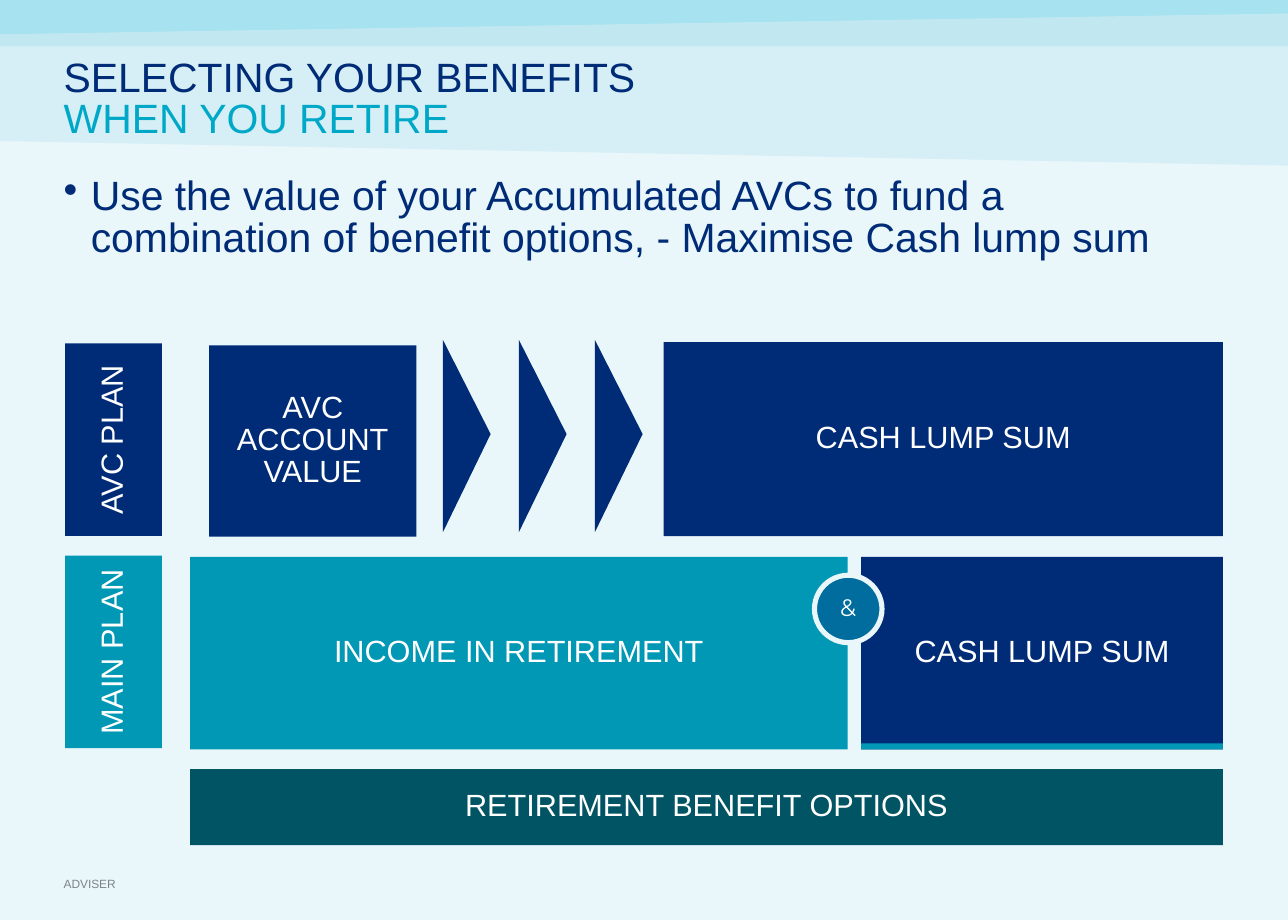
"""Build the slide on selecting benefits at retirement."""
from dataclasses import dataclass

from pptx import Presentation
from pptx.dml.color import RGBColor
from pptx.enum import shapes as kinds, text as txt
from pptx.oxml.ns import qn
from pptx import util as u

WIDE, HIGH = u.Inches(10.5), u.Inches(7.5)


@dataclass(frozen=True)
class Theme:
    """Hold the colours, fonts and type sizes."""
    ground: str = "EAF7FA"
    bands: tuple = ("A6E2EF", "C1E8F1", "D6EFF6")
    navy: str = "002C77"
    teal: str = "0098B5"
    sky: str = "00A8C8"
    deep: str = "005464"
    blue: str = "006D9E"
    white: str = "FFFFFF"
    grey: str = "7C848A"
    font: str = "Arial"
    badge: str = "Montserrat"
    head: int = 24
    label: int = 18
    sign: int = 14
    foot: int = 7


T = Theme()


def across(share):
    """Turn a percentage of the slide width into a length."""
    return round(WIDE * share / 100)


def down(share):
    """Turn a percentage of the slide height into a length."""
    return round(HIGH * share / 100)


def area(x, y, w, h):
    """Turn four percentages into left, top, width and height."""
    return across(x), down(y), across(w), down(h)


def paint(fill, color):
    """Fill with one solid colour."""
    fill.solid()
    fill.fore_color.rgb = RGBColor.from_string(color)


def write(shape, *lines, size=T.label, colors=(T.white,), font=T.font,
          align=txt.PP_ALIGN.CENTER, anchor=txt.MSO_ANCHOR.MIDDLE,
          lead=0.86, pad=(0, 0), wrap=True, turn=None, bullet=None):
    """Write one paragraph per line in the given format."""
    frame = shape.text_frame
    frame.word_wrap, frame.vertical_anchor = wrap, anchor
    frame.margin_left = frame.margin_right = across(pad[0])
    frame.margin_top = frame.margin_bottom = down(pad[1])
    if turn:
        frame._txBody.bodyPr.set("vert", turn)
    for i, line in enumerate(lines):
        para = frame.add_paragraph() if i else frame.paragraphs[0]
        para.alignment, para.line_spacing = align, lead
        run = para.add_run()
        run.text = line
        run.font.size, run.font.name = u.Pt(size), font
        run.font.color.rgb = RGBColor.from_string(colors[i % len(colors)])
        if bullet:
            props = para._p.get_or_add_pPr()
            dent = across(2.1)
            props.set("marL", str(dent))
            props.set("indent", str(-dent))
            mark = props.makeelement(qn("a:buChar"), {"char": bullet})
            props.append(mark)


def block(slide, box, color, *lines, kind="RECTANGLE", **style):
    """Add a plain filled shape, with a label if lines are given."""
    form = getattr(kinds.MSO_SHAPE, kind)
    shape = slide.shapes.add_shape(form, *area(*box))
    shape.shadow.inherit = False
    paint(shape.fill, color)
    shape.line.fill.background()
    if lines:
        write(shape, *lines, **style)
    return shape


def note(slide, box, *lines, **style):
    """Add a text box aligned to the left."""
    shape = slide.shapes.add_textbox(*area(*box))
    write(shape, *lines, align=txt.PP_ALIGN.LEFT, **style)


def band(slide, color, *points):
    """Add a slanted band through points given as shares."""
    spots = [(across(x), down(y)) for x, y in points]
    pen = slide.shapes.build_freeform(*spots[0])
    pen.add_line_segments(spots[1:], close=True)
    shape = pen.convert_to_shape()
    shape.shadow.inherit = False
    paint(shape.fill, color)
    shape.line.fill.background()


def arrow(slide, x, y, w, h):
    """Add a triangle that points right and fills the given area."""
    shape = block(slide, (x, y, w, h), T.navy, kind="ISOSCELES_TRIANGLE")
    left, top, wide, high = area(x, y, w, h)
    shape.left, shape.top = left + (wide - high) // 2, top + (high - wide) // 2
    shape.width, shape.height = high, wide
    shape.rotation = 90
    shape.adjustments[0] = 0.49


def header(slide):
    """Draw the bands, the title, the bullet and the footer."""
    edges = ((0, 0, 1.87, 4.13), (3.73, 1.47, 5.07, 5.07),
             (5.07, 5.07, 18, 15.33))
    for color, ys in zip(T.bands, edges):
        band(slide, color, *zip((0, 100, 100, 0), ys))
    top = txt.MSO_ANCHOR.TOP
    note(slide, (4.95, 5.87, 90, 12.53), "SELECTING YOUR BENEFITS",
         "WHEN YOU RETIRE", size=T.head, colors=(T.navy, T.sky),
         anchor=top, lead=0.83, pad=(0, 0.67))
    note(slide, (4.95, 18.53, 90, 11.47),
         "Use the value of your Accumulated AVCs to fund a combination of "
         "benefit options, - Maximise Cash lump sum", size=T.head,
         colors=(T.navy,), anchor=top, pad=(0, 0.67), bullet="•")
    note(slide, (4.95, 95.33, 30.1, 1.47), "ADVISER", size=T.foot,
         colors=(T.grey,), anchor=txt.MSO_ANCHOR.BOTTOM, lead=1, wrap=False)


def plans(slide):
    """Draw the two plan rows and the bar of options below them."""
    side, start, end, tall = 5.05, 14.76, 94.95, 20.93
    rows = 37.33, 60.4
    for y, color, name in zip(rows, (T.navy, T.teal),
                              ("AVC PLAN", "MAIN PLAN")):
        block(slide, (side, y, 7.52, tall), color, name, turn="vert270")
    block(slide, (16.24, 37.55, 16.1, 20.8), T.navy,
          "AVC", "ACCOUNT", "VALUE")
    for i in range(3):
        arrow(slide, 34.38 + 5.9 * i, 36.93, 3.71, tall)
    cash, split, low = 51.52, 66.86, rows[1] + 0.13
    block(slide, (cash, 37.2, end - cash, 21.07), T.navy,
          "CASH LUMP SUM", pad=(1.14, 0))
    block(slide, (start, low, 51.05, tall), T.teal,
          "INCOME IN RETIREMENT", pad=(1.14, 0))
    block(slide, (split, low, end - split, tall), T.navy,
          "CASH LUMP SUM", pad=(1.14, 0))
    block(slide, (split, 80.8, end - split, 0.67), T.teal)
    block(slide, (start, 83.6, end - start, 8.27), T.deep,
          "RETIREMENT BENEFIT OPTIONS")
    badge = block(slide, (63.24, 62.53, 5.24, 7.33), T.blue, "&",
                  kind="OVAL", size=T.sign, font=T.badge, wrap=False)
    paint(badge.line.fill, T.ground)
    badge.line.width = u.Pt(3)


def main():
    """Build and save the slide."""
    deck = Presentation()
    deck.slide_width, deck.slide_height = WIDE, HIGH
    slide = deck.slides.add_slide(deck.slide_layouts[6])
    paint(slide.background.fill, T.ground)
    header(slide)
    plans(slide)
    deck.save("out.pptx")


if __name__ == "__main__":
    main()
